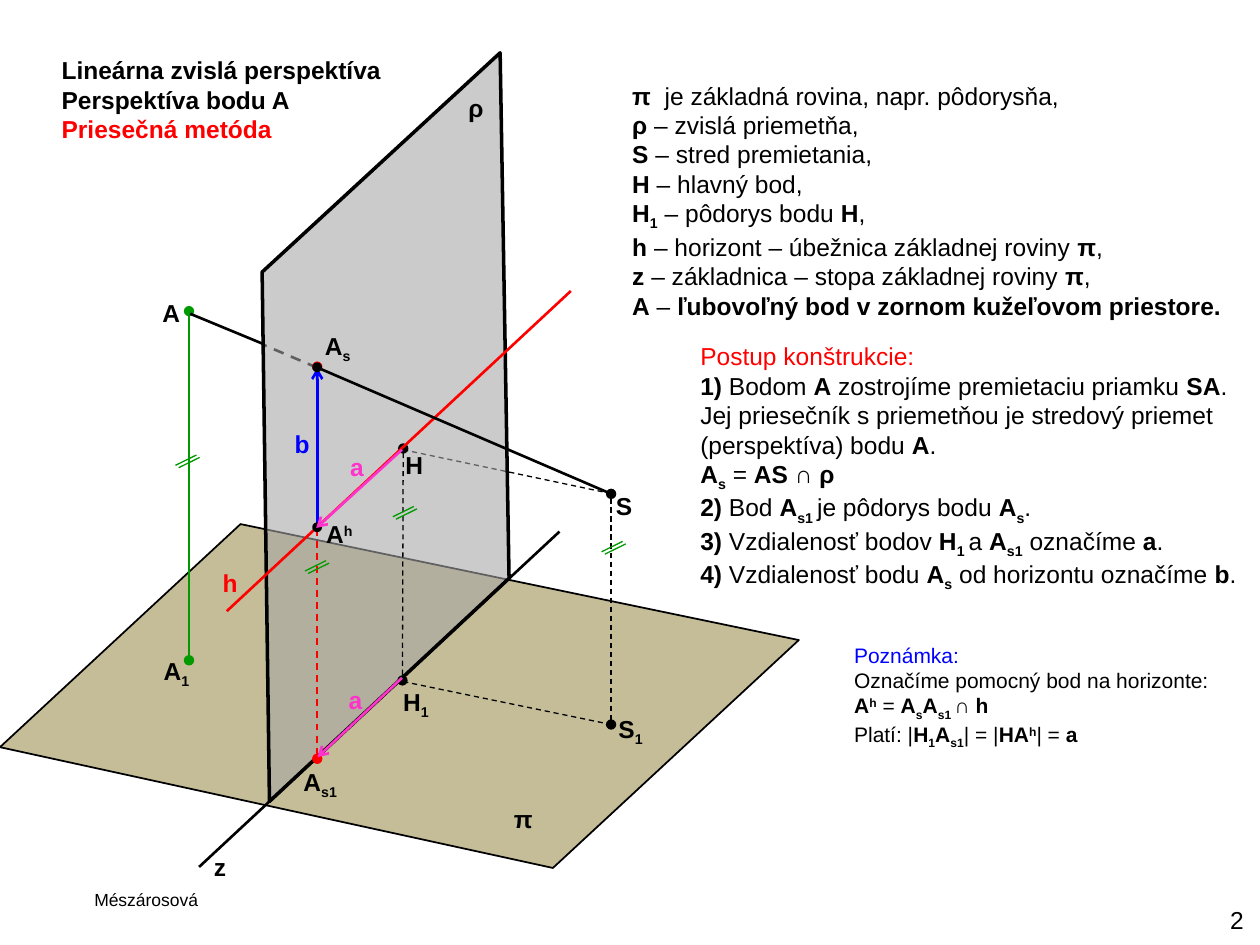
"""Build the slide on the intersection method of linear vertical perspective."""
import pptx
import pptx.dml.color
import pptx.enum.dml
import pptx.enum.shapes
import pptx.enum.text
import pptx.oxml.ns
import pptx.util
from lxml import etree

Pt = pptx.util.Pt
hue = pptx.dml.color.RGBColor.from_string
tag = pptx.oxml.ns.qn
BLACK, RED, GREEN, BLUE, PINK = "000000", "FF0000", "009900", "0000FF", "FF33CC"

deck = pptx.Presentation()
deck.slide_width, deck.slide_height = Pt(720), Pt(540)
slide = deck.slides.add_slide(deck.slide_layouts[6])
shapes = slide.shapes


def draw(start, end, shade, weight, dash=False, head=None, tail=None):
    link = shapes.add_connector(
        pptx.enum.shapes.MSO_CONNECTOR.STRAIGHT, *map(Pt, start + end))
    link.line.color.rgb = hue(shade)
    link.line.width = Pt(weight)
    if dash:
        link.line.dash_style = pptx.enum.dml.MSO_LINE.DASH
    props = link._element.spPr
    for name, kind in (("a:headEnd", head), ("a:tailEnd", tail)):
        if kind:
            etree.SubElement(props.find(tag("a:ln")), tag(name), type=kind)
    etree.SubElement(props, tag("a:effectLst"))


def write(box, lines, shade=BLACK, size=14, marks={}, wrap=False, fill=None):
    """Write lines in which * marks bold, ~ subscript and ^ superscript."""
    area = shapes.add_textbox(*map(Pt, box))
    if fill:
        area.fill.solid()
        area.fill.fore_color.rgb = hue(fill)
    frame = area.text_frame
    frame.word_wrap = wrap
    frame.auto_size = pptx.enum.text.MSO_AUTO_SIZE.SHAPE_TO_FIT_TEXT
    for row, line in enumerate(lines):
        par = frame.add_paragraph() if row else frame.paragraphs[0]
        par.font.name, par.font.size = "Arial", Pt(size)
        par.font.color.rgb = hue(marks.get(row, shade))
        parts = line.split("*")
        whole = not any(parts[::2])
        if whole:
            par.font.bold = True
        for i, part in enumerate(parts):
            for j, low in enumerate(part.split("~")):
                for k, bit in enumerate(low.split("^")):
                    if not bit:
                        continue
                    run = par.add_run()
                    run.text = bit
                    if i % 2 and not whole:
                        run.font.bold = True
                    if j % 2 or k % 2:
                        base = "-25000" if j % 2 else "30000"
                        run._r.get_or_add_rPr().set("baseline", base)
    return frame


layers = [
    ([(0, 427), (137.5, 299.5), (456.5, 365.8), (316, 496)], "C4BD97", 100, 1, [
        ((230.4, 389.5), (349.2, 414), BLACK, 0.75, True),
        ((108, 177.8), (108, 377.3), GREEN, 1.5, False, "oval", "oval"),
        ((150.5, 196.6), (108.7, 179.3), BLACK, 1.5),
        ((349.2, 282.2), (349.2, 414), BLACK, 0.75, True, "oval", "oval"),
        ((113.8, 495.4), (319.7, 303.8), BLACK, 1.5),
        ((230.4, 257), (349.9, 282.2), BLACK, 0.75, True),
        ((181.4, 210.2), (151.2, 197.3), BLACK, 1.5, True),
    ]),
    ([(154, 458), (149.8, 155.5), (285.8, 30.2), (290.9, 330.5)], "A6A6A6", 58, 2, [
        ((230.4, 256.3), (230, 388.8), BLACK, 0.75, True, "oval", "oval"),
        ((181.3, 209.5), (181.3, 433.6), RED, 1, True, "oval", "oval"),
        ((129.6, 349.2), (326.2, 166.3), RED, 1.5),
        ((349.2, 282.2), (183.6, 211), BLACK, 1.5),
        ((181.4, 432.7), (229.7, 387.4), PINK, 1.5, False, "arrow"),
        ((181.3, 210.2), (181.3, 301), BLUE, 1.5, False, "arrow"),
    ]),
]
for points, fill, alpha, weight, lines in layers:
    first, *rest = [(Pt(x), Pt(y)) for x, y in points]
    path = shapes.build_freeform(*first)
    path.add_line_segments(rest, close=True)
    plane = path.convert_to_shape()
    plane.shadow.inherit = False
    plane.fill.solid()
    plane.fill.fore_color.rgb = hue(fill)
    if alpha < 100:
        tint = plane._element.spPr.find(tag("a:solidFill"))[0]
        etree.SubElement(tint, tag("a:alpha"), val=str(alpha * 1000))
    plane.line.color.rgb = hue(BLACK)
    plane.line.width = Pt(weight)
    for line in lines:
        draw(*line)

for x, y in ((112.3, 260), (236.5, 289.4), (355.8, 309.4), (186.3, 320.4)):
    for dx, dy in ((0, 0), (1.8, 1.4)):
        draw((x + dx, y + dy), (x + dx - 12, y + dy + 5.9), GREEN, 0.75)

for y in (208.1, 299.5):
    dot = shapes.add_shape(
        pptx.enum.shapes.MSO_SHAPE.OVAL, Pt(179.4), Pt(y), Pt(3.6), Pt(3.6))
    dot.shadow.inherit = False
    dot.fill.solid()
    dot.fill.fore_color.rgb = hue(BLACK)
    dot.line.color.rgb = hue(BLACK)
    dot.line.width = Pt(2)
draw((180.7, 301.7), (229.7, 257), PINK, 1.5, False, "arrow")

for x, y, width, label, shade in (
    (286.6, 455.8, 22.3, "π", BLACK),
    (85.7, 167, 24.5, "A", BLACK),
    (86.4, 371.5, 30.2, "A~1~", BLACK),
    (344.9, 277.2, 23.8, "S", BLACK),
    (346.3, 404.6, 29.5, "S~1~", BLACK),
    (120.2, 321.1, 23, "h", RED),
    (115.2, 483.1, 21.6, "z", BLACK),
    (223.2, 388.8, 30.2, "H~1~", BLACK),
    (166.3, 434.9, 35.3, "A~s1~", BLACK),
    (178.6, 185.8, 30.2, "A~s~", BLACK),
    (224.6, 253.4, 24.5, "H", BLACK),
    (260.6, 49.7, 22.3, "ρ", BLACK),
    (192.2, 388.1, 22.3, "a", PINK),
    (161.3, 241.9, 23, "b", BLUE),
    (179.3, 293, 30.2, "A^h^", BLACK),
    (193, 254.9, 22.3, "a", PINK),
):
    write((x, y, width, 24.5), [f"*{label}*"], shade)

write((28.1, 28.1, 198, 58.3), [
    "*Lineárna zvislá perspektíva*",
    "*Perspektíva bodu A*",
    "*Priesečná metóda*",
], marks={2: RED})
write((354.2, 42.5, 355.7, 143.3), [
    "*π  *je základná rovina, napr. pôdorysňa,",
    "*ρ* – zvislá priemetňa,",
    "*S* – stred premietania,",
    "*H* – hlavný bod,",
    "*H~1~* – pôdorys bodu *H*,",
    "*h* – horizont – úbežnica základnej roviny *π*,",
    "*z* – základnica – stopa základnej roviny *π*,",
    "*A* – *ľubovoľný bod v zornom kužeľovom priestore.*",
])
write((393.1, 191.5, 326.9, 143.3), [
    "Postup konštrukcie:",
    "*1) *Bodom *A* zostrojíme premietaciu priamku *SA*.",
    "Jej priesečník s priemetňou je stredový priemet (perspektíva) bodu *A*.",
    "*A~s~* = *AS *∩* ρ*",
    "*2) *Bod *A~s1 ~*je pôdorys bodu *A~s~*.",
    "*3) *Vzdialenosť bodov *H~1 ~*a *A~s1~* označíme *a*.",
    "*4)* Vzdialenosť bodu *A~s~* od horizontu označíme *b*.",
], marks={0: RED}, wrap=True, fill="FFFFFF")
write((481, 363.6, 218.9, 65.5), [
    "Poznámka:",
    "Označíme pomocný bod na horizonte:",
    "*A^h^* = *A~s~A~s1 ~*∩* h*",
    "Platí: |*H~1~A~s1~*| = |*HA^h^*| = *a*",
], size=12, marks={0: BLUE}, fill="FFFFFF")
write((46.8, 504.7, 74.2, 19.4), ["Mészárosová"], size=10)
page = write((686.2, 513.4, 31.7, 24.5), ["2"])
page.vertical_anchor = pptx.enum.text.MSO_ANCHOR.MIDDLE
page.paragraphs[0].alignment = pptx.enum.text.PP_ALIGN.RIGHT

deck.save("out.pptx")
